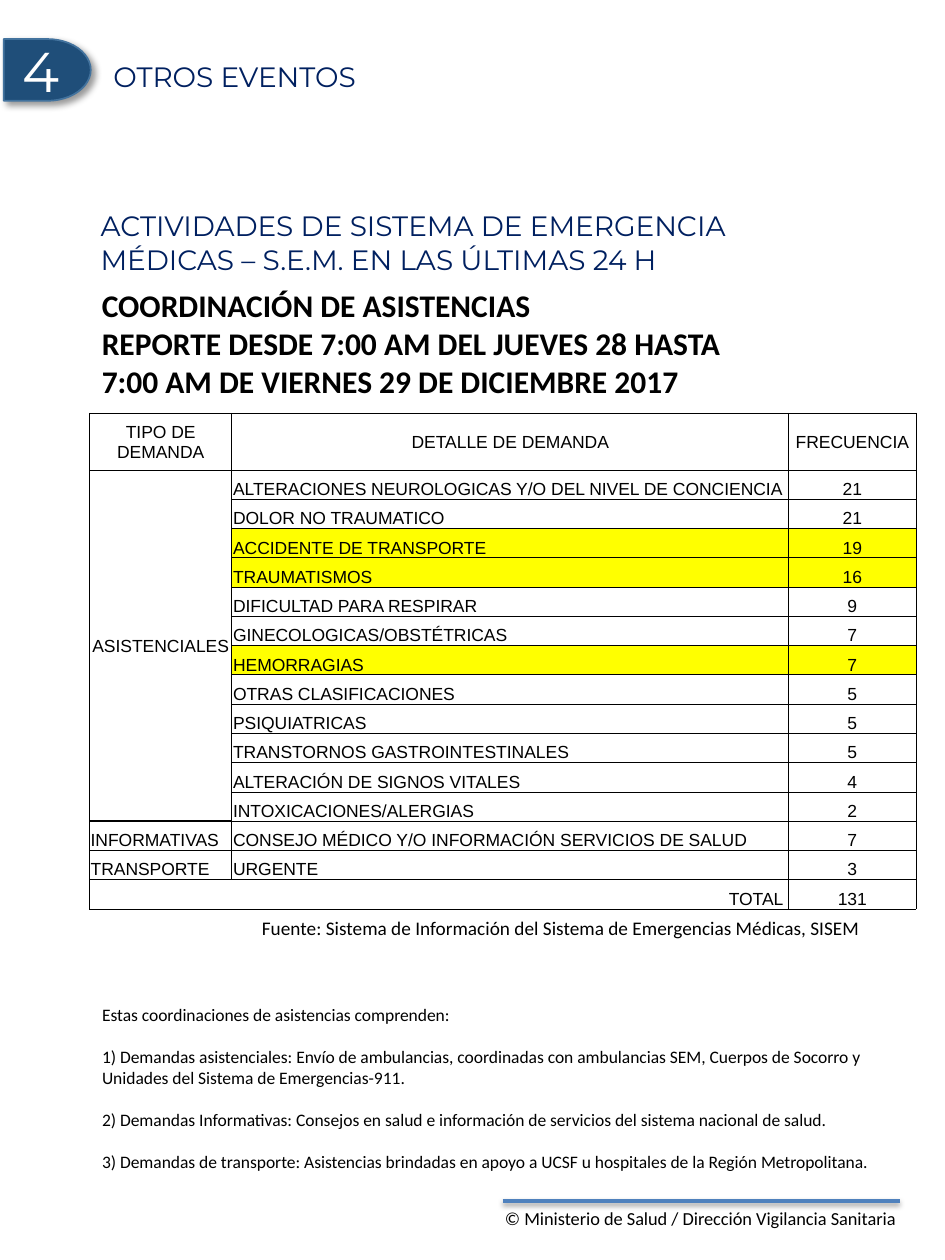
from lxml.etree import SubElement
from pptx import Presentation
from pptx.dml.color import RGBColor
from pptx.enum.shapes import MSO_CONNECTOR, MSO_SHAPE
from pptx.enum.text import MSO_ANCHOR, MSO_AUTO_SIZE, PP_ALIGN
from pptx.oxml.ns import qn
from pptx.util import Inches, Pt

BLACK, NAVY, YELLOW = "000000", "002060", "FFFF00"
COLUMNS = [1.13, 4.42, 1.01]
HEADER_HEIGHT = 0.45
HEADINGS = ["TIPO DE DEMANDA", "DETALLE DE DEMANDA", "FRECUENCIA"]
DEMANDS = [
    ("ASISTENCIALES", [
        ("ALTERACIONES NEUROLOGICAS Y/O DEL NIVEL DE CONCIENCIA", 21),
        ("DOLOR NO TRAUMATICO", 21),
        ("ACCIDENTE DE TRANSPORTE", 19),
        ("TRAUMATISMOS", 16),
        ("DIFICULTAD PARA RESPIRAR", 9),
        ("GINECOLOGICAS/OBSTÉTRICAS", 7),
        ("HEMORRAGIAS", 7),
        ("OTRAS CLASIFICACIONES", 5),
        ("PSIQUIATRICAS", 5),
        ("TRANSTORNOS GASTROINTESTINALES", 5),
        ("ALTERACIÓN DE SIGNOS VITALES", 4),
        ("INTOXICACIONES/ALERGIAS", 2),
    ]),
    ("INFORMATIVAS", [("CONSEJO MÉDICO Y/O INFORMACIÓN SERVICIOS DE SALUD", 7)]),
    ("TRANSPORTE", [("URGENTE", 3)]),
]
HIGHLIGHTED = {"ACCIDENTE DE TRANSPORTE", "TRAUMATISMOS", "HEMORRAGIAS"}
NOTES = [
    "Estas coordinaciones de asistencias comprenden:",
    "1) Demandas asistenciales: Envío de ambulancias, coordinadas con ambulancias SEM, "
    "Cuerpos de Socorro y Unidades del Sistema de Emergencias-911.",
    "2) Demandas Informativas: Consejos en salud e información de servicios del sistema "
    "nacional de salud.",
    "3) Demandas de transporte: Asistencias brindadas en apoyo a UCSF u hospitales de la "
    "Región Metropolitana.",
]


def rgb(value):
    return RGBColor.from_string(value)


def place(sp, box):
    sp.left, sp.top, sp.width, sp.height = map(Inches, box)


def write(tf, lines, font, size, color=BLACK, bold=False, align=PP_ALIGN.LEFT, gap=0):
    tf.text = "\n".join(lines)
    for p in tf.paragraphs:
        p.alignment = align
        p.space_before, p.space_after = Pt(0), Pt(gap)
        for r in p.runs:
            r.font.name, r.font.size, r.font.bold = font, Pt(size), bold
            r.font.color.rgb = rgb(color)


def add_text(slide, box, lines, font, size, wrap=True, **style):
    sp = slide.shapes.add_textbox(*map(Inches, box))
    sp.text_frame.word_wrap = wrap
    write(sp.text_frame, lines, font, size, **style)
    return sp


def format_heading(tf):
    tf.vertical_anchor = MSO_ANCHOR.MIDDLE
    tf.auto_size = MSO_AUTO_SIZE.NONE
    tf.margin_left = tf.margin_right = tf.margin_top = tf.margin_bottom = Inches(0.1)


def add_shadow(sp, alpha, blur, distance, angle):
    effects = SubElement(sp._element.spPr, qn("a:effectLst"))
    shadow = SubElement(effects, qn("a:outerShdw"), blurRad=str(Pt(blur)),
                        dist=str(Pt(distance)), dir=str(angle * 60000), rotWithShape="0")
    color = SubElement(shadow, qn("a:srgbClr"), val=BLACK)
    SubElement(color, qn("a:alpha"), val=str(alpha * 1000))


def add_section_header(slide, box):
    """Numbered tab at the page edge, with the section title beside it."""
    left, top, width, height = box
    tab = slide.shapes.add_shape(MSO_SHAPE.FLOWCHART_DELAY,
                                 *map(Inches, (left, top, 0.69, height)))
    tab.fill.solid()
    tab.fill.fore_color.rgb = rgb("1F4E79")
    tab.line.color.rgb = rgb("43739E")
    tab.line.width = Pt(1)
    add_shadow(tab, 40, 4, 3, 45)
    tab.text_frame.vertical_anchor = MSO_ANCHOR.MIDDLE
    write(tab.text_frame, ["4"], "Montserrat", 32, "FFFFFF", align=PP_ALIGN.CENTER)

    title = slide.shapes.title
    place(title, (left + 0.77, top + 0.04, width - 0.77, 0.51))
    format_heading(title.text_frame)
    write(title.text_frame, ["OTROS EVENTOS"], "Montserrat", 16, NAVY)


def add_report_heading(slide, box):
    left, top, width, height = box
    heading = add_text(slide, (left, top, width, 0.51),
                       ["ACTIVIDADES DE SISTEMA DE EMERGENCIA MÉDICAS – S.E.M. "
                        "EN LAS ÚLTIMAS 24 H"], "Montserrat", 16, color=NAVY)
    format_heading(heading.text_frame)
    add_text(slide, (left + 0.01, top + 0.55, 5.44, height - 0.55),
             ["COORDINACIÓN DE ASISTENCIAS",
              "REPORTE DESDE 7:00 AM DEL JUEVES 28 HASTA 7:00 AM DE VIERNES 29 "
              "DE DICIEMBRE 2017"], "Calibri", 18, bold=True)


def set_borders(cell, **widths):
    tcPr = cell._tc.get_or_add_tcPr()
    for side in "LRTB":
        ln = SubElement(tcPr, qn(f"a:ln{side}"), w=str(Pt(widths.get(side, 0.5))))
        SubElement(SubElement(ln, qn("a:solidFill")), qn("a:srgbClr"), val=BLACK)


def fill_cell(cell, text, align=PP_ALIGN.LEFT, anchor=MSO_ANCHOR.BOTTOM):
    cell.margin_left = cell.margin_right = cell.margin_top = Inches(0.01)
    cell.margin_bottom = 0
    cell.vertical_anchor = anchor
    write(cell.text_frame, [text], "Arial", 10, align=align)
    if text in HIGHLIGHTED:
        cell.fill.solid()
        cell.fill.fore_color.rgb = rgb(YELLOW)


def add_demand_table(slide, box):
    details = [(kind, *row) for kind, rows in DEMANDS for row in rows]
    last = len(details) + 1
    table = slide.shapes.add_table(last + 1, len(COLUMNS), *map(Inches, box)).table
    table.first_row = table.horz_banding = False
    for column, width in zip(table.columns, COLUMNS):
        column.width = Inches(width)
    for row in table.rows:
        row.height = Inches((box[3] - HEADER_HEIGHT) / last)
    table.rows[0].height = Inches(HEADER_HEIGHT)

    group_end = len(DEMANDS[0][1])
    for r in range(last + 1):
        for c in range(len(COLUMNS)):
            heavy = {group_end: {"B": 1}, group_end + 1: {"T": 1}}.get(r, {})
            set_borders(table.cell(r, c), **(heavy if c == 0 else {}))
            table.cell(r, c).fill.background()

    for c, text in enumerate(HEADINGS):
        fill_cell(table.cell(0, c), text, PP_ALIGN.CENTER, MSO_ANCHOR.MIDDLE)
    for r, (_, detail, count) in enumerate(details, 1):
        fill_cell(table.cell(r, 1), detail)
        fill_cell(table.cell(r, 2), str(count), PP_ALIGN.CENTER)
        if detail in HIGHLIGHTED:
            table.cell(r, 2).fill.solid()
            table.cell(r, 2).fill.fore_color.rgb = rgb(YELLOW)

    r = 1
    for kind, rows in DEMANDS:
        if len(rows) > 1:
            table.cell(r, 0).merge(table.cell(r + len(rows) - 1, 0))
            fill_cell(table.cell(r, 0), kind, PP_ALIGN.CENTER, MSO_ANCHOR.MIDDLE)
        else:
            fill_cell(table.cell(r, 0), kind)
        r += len(rows)

    table.cell(last, 0).merge(table.cell(last, 1))
    fill_cell(table.cell(last, 0), "TOTAL ", PP_ALIGN.RIGHT)
    fill_cell(table.cell(last, 2), str(sum(row[2] for row in details)), PP_ALIGN.CENTER)


def add_notes_list(slide, box):
    body = slide.placeholders[1]
    place(body, box)
    body.text_frame.auto_size = MSO_AUTO_SIZE.NONE
    write(body.text_frame, NOTES, "Calibri", 10, gap=12)
    for p in body.text_frame.paragraphs:
        pPr = p._p.get_or_add_pPr()
        pPr.set("marL", "0")
        pPr.set("indent", "0")
        SubElement(pPr, qn("a:buNone"))


def add_footer(slide, box):
    left, top, width, height = box
    rule = slide.shapes.add_connector(MSO_CONNECTOR.STRAIGHT, Inches(left + 0.08), Inches(top),
                                      Inches(left + 3.23), Inches(top))
    rule.line.color.rgb = rgb("4F81BD")
    rule.line.width = Pt(2)
    add_shadow(rule, 38, 3.1, 1.6, 90)
    add_text(slide, box, ["© Ministerio de Salud / Dirección Vigilancia Sanitaria"],
             "Calibri", 10.5, wrap=False)


def main():
    prs = Presentation()
    prs.slide_width, prs.slide_height = Inches(7.5), Inches(10)
    slide = prs.slides.add_slide(prs.slide_layouts[1])
    add_footer(slide, (3.91, 9.53, 3.36, 0.45))
    add_section_header(slide, (0.03, 0.31, 6.83, 0.49))
    add_report_heading(slide, (0.7, 1.67, 6.06, 1.86))
    add_demand_table(slide, (0.71, 3.28, sum(COLUMNS), 3.94))
    add_text(slide, (1.98, 7.22, 4.98, 0.28),
             ["Fuente: Sistema de Información del Sistema de Emergencias Médicas, SISEM"],
             "Calibri", 11, wrap=False)
    add_notes_list(slide, (0.71, 7.92, 6.44, 1.45))
    prs.save("out.pptx")


if __name__ == "__main__":
    main()
